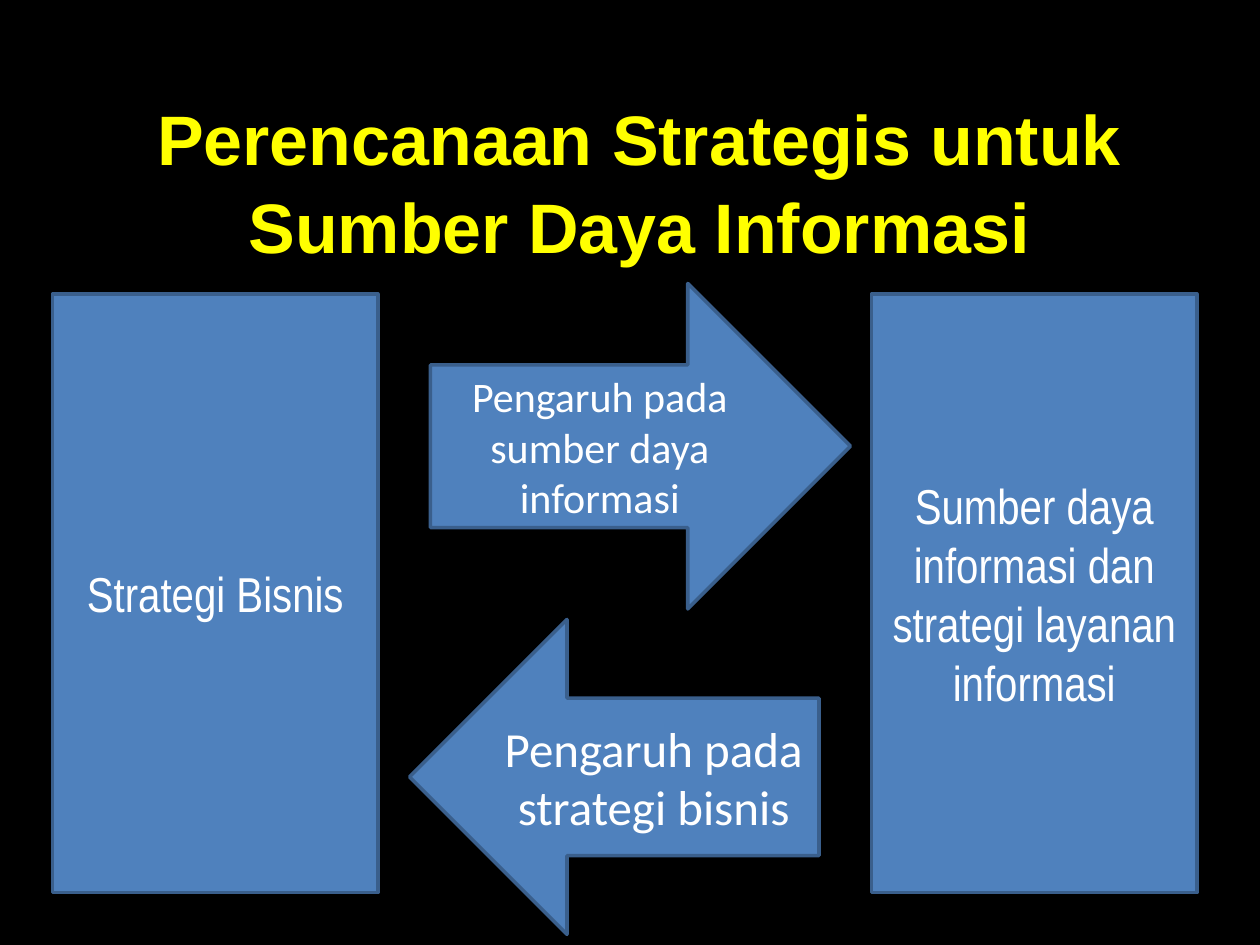
from dataclasses import dataclass

from pptx import Presentation
from pptx.dml.color import RGBColor
from pptx.enum.shapes import MSO_SHAPE
from pptx.enum.text import MSO_ANCHOR, PP_ALIGN
from pptx.util import Pt

PX = 9525  # EMU per px, 96 px to the inch


@dataclass(frozen=True)
class Theme:
    background: str = "000000"
    heading: str = "FFFF00"
    fill: str = "4F81BD"
    line: str = "3A5F8C"
    text: str = "FFFFFF"
    heading_size: int = 40
    large: int = 28
    small: int = 24


theme = Theme()


def write(shape, wording, font_name, size, color, bold=False):
    frame = shape.text_frame
    frame.text = wording
    frame.word_wrap = True
    frame.vertical_anchor = MSO_ANCHOR.MIDDLE
    paragraph = frame.paragraphs[0]
    paragraph.alignment = PP_ALIGN.CENTER
    font = paragraph.runs[0].font
    font.name, font.size, font.bold = font_name, Pt(size), bold
    font.color.rgb = RGBColor.from_string(color)


prs = Presentation()
prs.slide_width, prs.slide_height = 960 * PX, 720 * PX
slide = prs.slides.add_slide(prs.slide_layouts[5])
slide.background.fill.solid()
slide.background.fill.fore_color.rgb = RGBColor.from_string(theme.background)

# Two strategies at the sides, with their influence on each other between them
blocks = [
    (MSO_SHAPE.RECTANGLE, (40, 224, 248, 456),
     "Strategi Bisnis", "Arial Narrow", theme.large),
    (MSO_SHAPE.RECTANGLE, (664, 224, 248, 456),
     "Sumber daya informasi dan strategi layanan informasi", "Arial Narrow", theme.large),
    (MSO_SHAPE.RIGHT_ARROW, (328, 216, 320, 248),
     "Pengaruh pada sumber daya informasi", "Calibri", theme.small),
    (MSO_SHAPE.LEFT_ARROW, (312, 472, 312, 240),
     "Pengaruh pada strategi bisnis", "Calibri", theme.large),
]
for kind, box, wording, font_name, size in blocks:
    block = slide.shapes.add_shape(kind, *(length * PX for length in box))
    block.shadow.inherit = False
    block.fill.solid()
    block.fill.fore_color.rgb = RGBColor.from_string(theme.fill)
    block.line.color.rgb = RGBColor.from_string(theme.line)
    block.line.width = Pt(2)
    write(block, wording, font_name, size, theme.text)

heading = slide.shapes.title
heading.left, heading.top, heading.width, heading.height = (
    length * PX for length in (40, 65, 894, 139))
write(heading, "Perencanaan Strategis untuk Sumber Daya Informasi",
      "Arial", theme.heading_size, theme.heading, bold=True)
heading.text_frame.vertical_anchor = MSO_ANCHOR.TOP
heading.text_frame.paragraphs[0].line_spacing = 1.05

prs.save("out.pptx")
